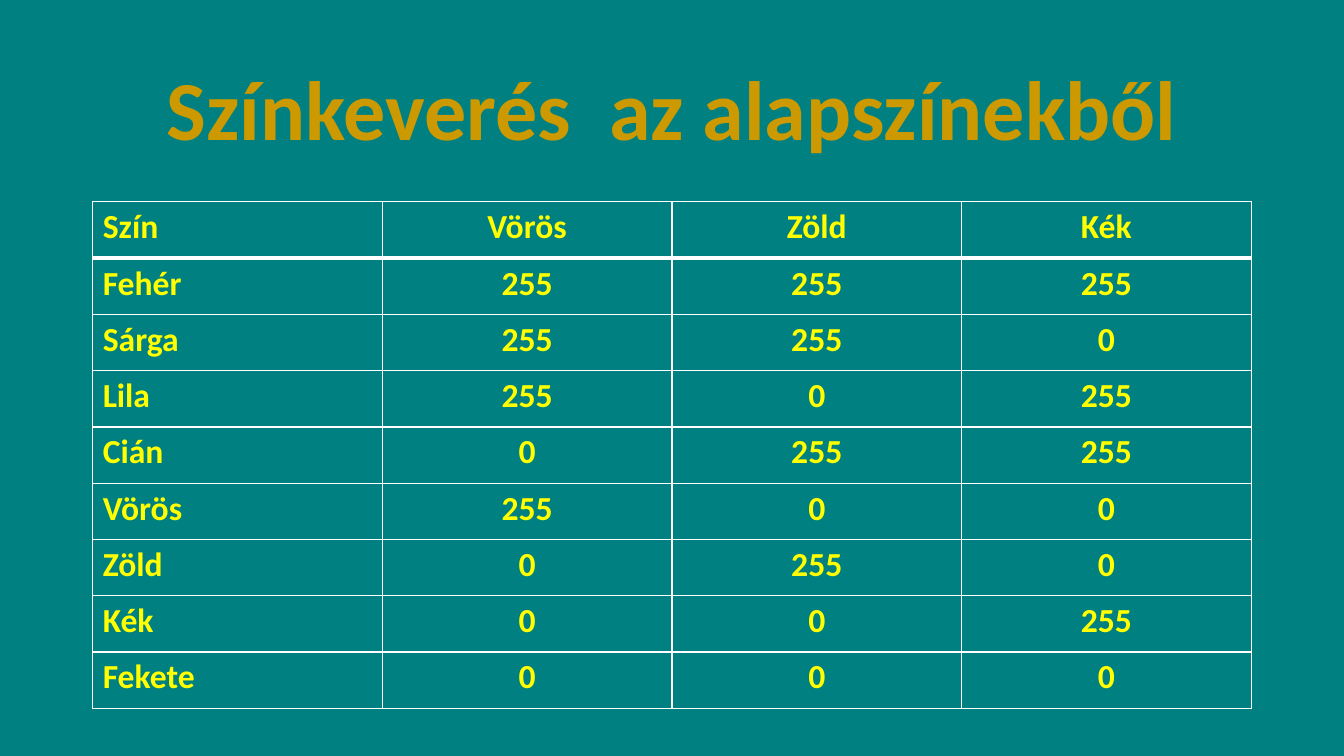
from dataclasses import dataclass

from lxml import etree
from pptx import Presentation
from pptx.dml.color import RGBColor
from pptx.enum.text import MSO_ANCHOR, PP_ALIGN
from pptx.oxml.ns import qn
from pptx.util import Inches, Pt

LEFT, CENTER = PP_ALIGN.LEFT, PP_ALIGN.CENTER
MIDDLE = MSO_ANCHOR.MIDDLE
WIDE, HIGH = Inches(13.33), Inches(7.5)


@dataclass(frozen=True)
class Theme:
    font: str = "Calibri"
    back: str = "008080"
    title: str = "CC9900"
    text: str = "FFFF00"
    line: str = "FFFFFF"
    head: int = 60
    body: int = 24
    thin: int = 1
    thick: int = 3


THEME = Theme()
TITLE = "Színkeverés  az alapszínekből"
MIXES = [
    ("Szín", "Vörös", "Zöld", "Kék"),
    ("Fehér", 255, 255, 255),
    ("Sárga", 255, 255, 0),
    ("Lila", 255, 0, 255),
    ("Cián", 0, 255, 255),
    ("Vörös", 255, 0, 0),
    ("Zöld", 0, 255, 0),
    ("Kék", 0, 0, 255),
    ("Fekete", 0, 0, 0),
]


def area(left, top, width, height):
    return (int(WIDE * left), int(HIGH * top),
            int(WIDE * width), int(HIGH * height))


def paint(fill, color):
    fill.solid()
    fill.fore_color.rgb = RGBColor.from_string(color)


def write(frame, text, size, color, align):
    frame.text = text
    para = frame.paragraphs[0]
    para.alignment = align
    font = para.font
    font.name, font.size, font.bold = THEME.font, Pt(size), True
    font.color.rgb = RGBColor.from_string(color)
    return para


def border(cell, sides):
    props = cell._tc.get_or_add_tcPr()
    for side, width in sides.items():
        line = etree.SubElement(props, qn(f"a:ln{side}"), w=str(Pt(width)))
        fill = etree.SubElement(line, qn("a:solidFill"))
        etree.SubElement(fill, qn("a:srgbClr"), val=THEME.line)


def add_title(slide, text, box):
    title = slide.shapes.title
    title.left, title.top, title.width, title.height = box
    frame = title.text_frame
    frame.word_wrap = True
    frame.vertical_anchor = MIDDLE
    para = write(frame, text, THEME.head, THEME.title, CENTER)
    para.line_spacing = 0.9


def add_grid(slide, data, box):
    table = slide.shapes.add_table(len(data), len(data[0]), *box).table
    table.horz_banding = False
    for row, values in enumerate(data):
        top = THEME.thick if row == 1 else THEME.thin
        bottom = THEME.thick if row == 0 else THEME.thin
        sides = {"L": THEME.thin, "R": THEME.thin, "T": top, "B": bottom}
        for col, value in enumerate(values):
            cell = table.cell(row, col)
            border(cell, sides)
            paint(cell.fill, THEME.back)
            write(cell.text_frame, str(value), THEME.body, THEME.text,
                  CENTER if col else LEFT)


def main():
    deck = Presentation()
    deck.slide_width, deck.slide_height = WIDE, HIGH
    slide = deck.slides.add_slide(deck.slide_layouts[5])
    paint(slide.background.fill, THEME.back)
    margin = 0.069
    width = 1 - 2 * margin
    add_title(slide, TITLE, area(margin, 0.053, width, 0.193))
    add_grid(slide, MIXES, area(margin, 0.267, width, 0.67))
    deck.save("out.pptx")


if __name__ == "__main__":
    main()
